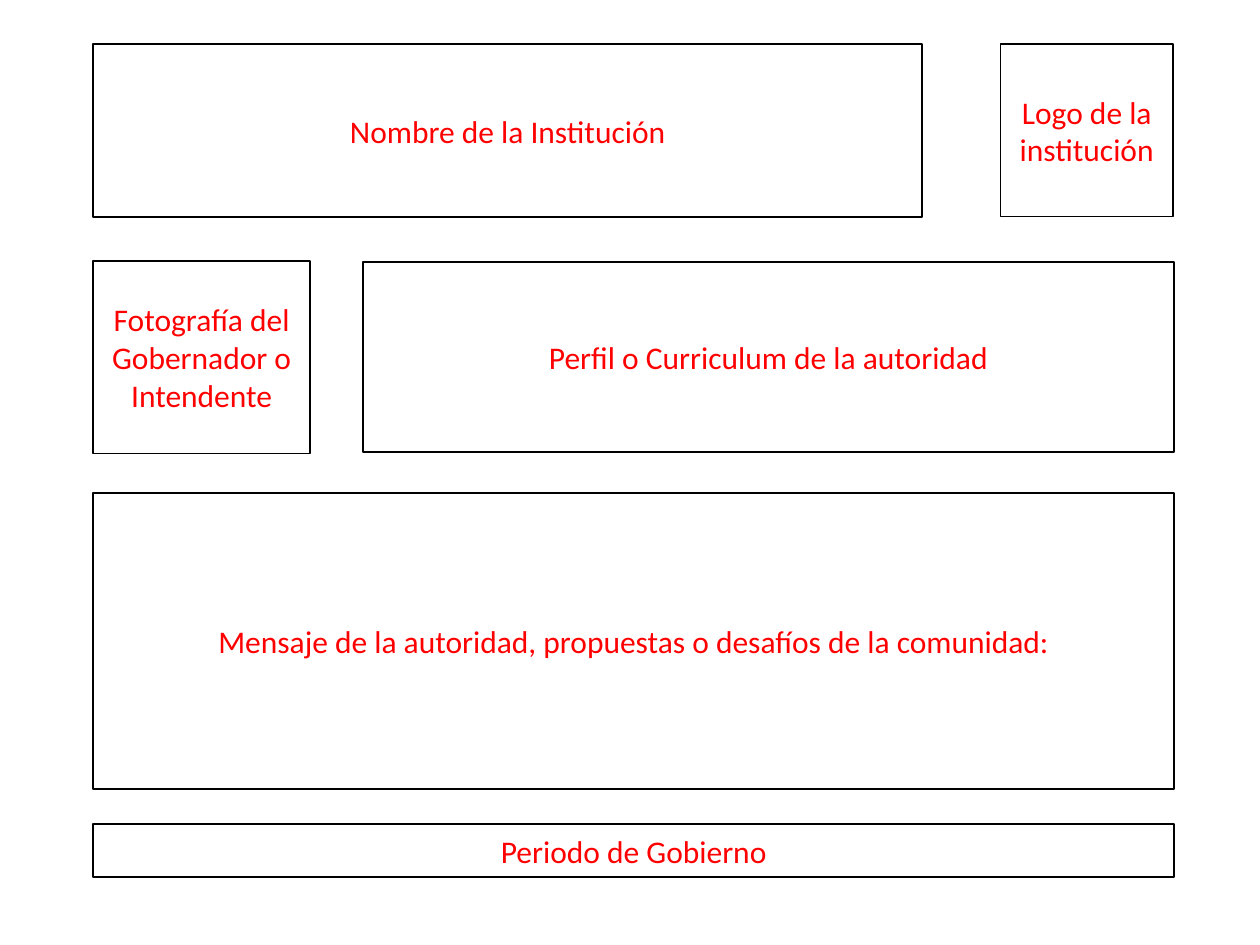
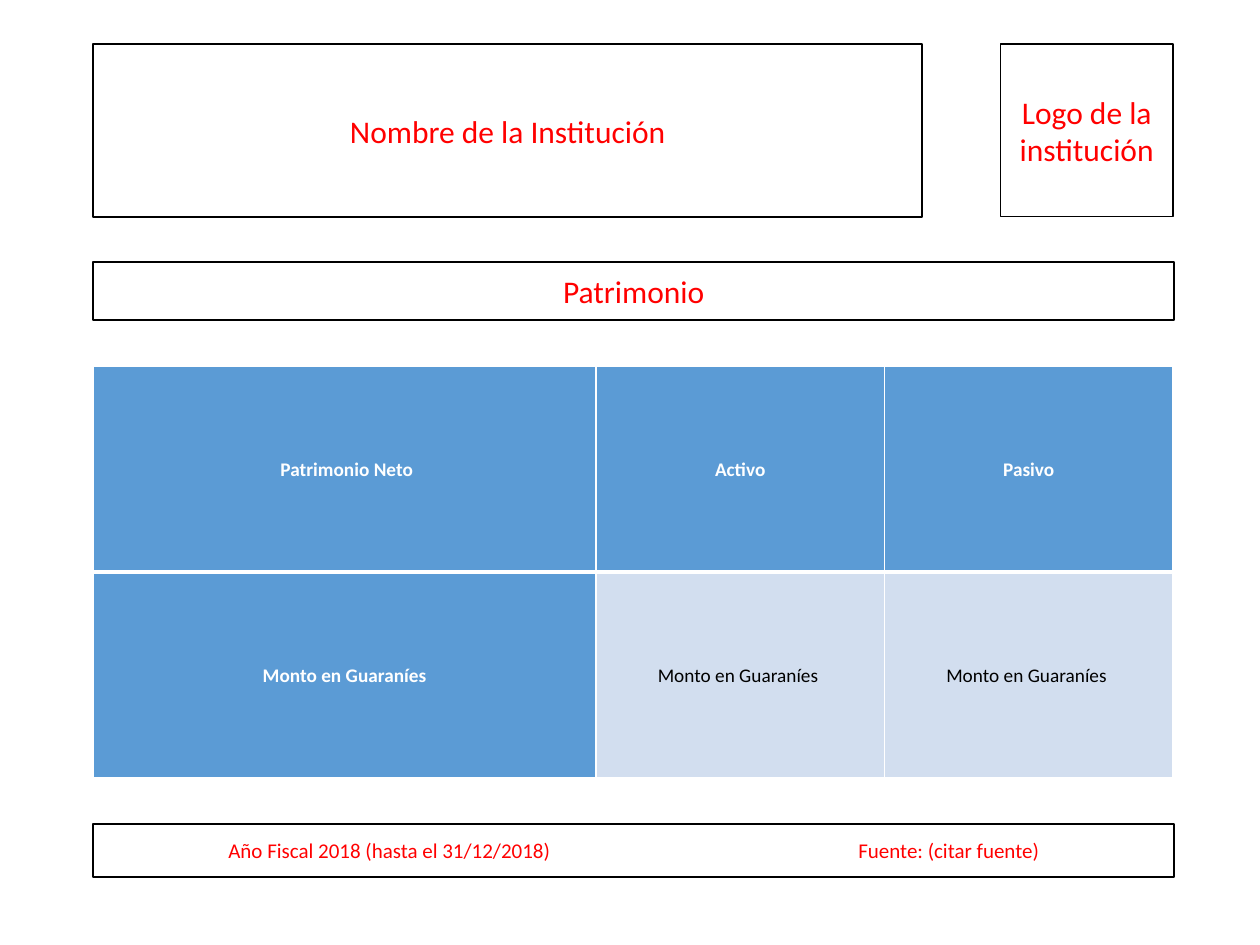
import dataclasses

import pptx
import pptx.dml.color
import pptx.enum.shapes
import pptx.enum.text
import pptx.oxml
import pptx.oxml.ns
import pptx.util
from pptx.presentation import Presentation as Deck
from pptx.shapes.autoshape import Shape
from pptx.slide import Slide
from pptx.table import _Cell as Cell
from pptx.text.text import _Paragraph as Para

Inches = pptx.util.Inches
Pt = pptx.util.Pt


@dataclasses.dataclass(frozen=True)
class Theme:
    font: str = "Calibri"
    red: str = "FF0000"
    black: str = "000000"
    white: str = "FFFFFF"
    blue: str = "5B9BD5"
    pale: str = "D2DEEF"
    big: int = 18
    note: int = 12
    small: int = 11
    thin: int = 1
    thick: int = 3


@dataclasses.dataclass(frozen=True)
class Box:
    text: str
    left: float
    top: float
    width: float
    height: float
    size: int = Theme.big


THEME = Theme()
LEFT, WIDE = 0.74, 8.58
FOOT_TOP, FOOT_HIGH = 6.54, 0.42
FOOT_TAB = 5.0

NAME = Box("Nombre de la Institución", LEFT, 0.35, 6.58, 1.37)
LOGO = Box("Logo de la institución", 7.94, 0.35, 1.37, 1.37)
PROFILE = (
    Box("Fotografía del Gobernador o Intendente", LEFT, 2.07, 1.72, 1.53),
    Box("Perfil o Curriculum de la autoridad", 2.88, 2.08, 6.44, 1.51),
    Box("Mensaje de la autoridad, propuestas o desafíos de la comunidad:",
        LEFT, 3.91, WIDE, 2.35),
    Box("Periodo de Gobierno", LEFT, FOOT_TOP, WIDE, FOOT_HIGH),
)
WEALTH = Box("Patrimonio", LEFT, 2.08, WIDE, 0.46)
SOURCE = Box("Año Fiscal 2018 (hasta el 31/12/2018) \tFuente: (citar fuente)",
             LEFT, FOOT_TOP, WIDE, FOOT_HIGH, THEME.note)

ROWS = (
    (" Patrimonio Neto", "Activo", "Pasivo"),
    ("Monto en Guaraníes", "Monto en Guaraníes ", "Monto en Guaraníes "),
)
COLS = (3.99, 2.29, 2.29)
GRID_TOP, ROW_HIGH = 2.91, 1.63


def rgb(code: str) -> pptx.dml.color.RGBColor:
    return pptx.dml.color.RGBColor.from_string(code)


def style(para: Para, size: int, color: str, bold: bool = False) -> None:
    para.alignment = pptx.enum.text.PP_ALIGN.CENTER
    for run in para.runs:
        run.font.name = THEME.font
        run.font.size = Pt(size)
        run.font.bold = bold
        run.font.color.rgb = rgb(color)


def dress(shape: Shape, box: Box) -> None:
    """Give a shape the outline, text and place of its box."""
    shape.left, shape.top = Inches(box.left), Inches(box.top)
    shape.width, shape.height = Inches(box.width), Inches(box.height)
    shape.fill.background()
    shape.line.color.rgb = rgb(THEME.black)
    shape.line.width = Pt(THEME.thin)
    frame = shape.text_frame
    frame.text = box.text
    frame.word_wrap = True
    frame.auto_size = pptx.enum.text.MSO_AUTO_SIZE.NONE
    frame.vertical_anchor = pptx.enum.text.MSO_ANCHOR.MIDDLE
    style(frame.paragraphs[0], box.size, THEME.red)


def draw(slide: Slide, box: Box) -> Shape:
    shape = slide.shapes.add_shape(
        pptx.enum.shapes.MSO_SHAPE.RECTANGLE, Inches(box.left),
        Inches(box.top), Inches(box.width), Inches(box.height))
    shape.shadow.inherit = False
    dress(shape, box)
    return shape


def start(deck: Deck) -> Slide:
    """Add a slide with the shared name and logo boxes."""
    slide = deck.slides.add_slide(deck.slide_layouts[5])
    dress(slide.shapes.title, NAME)
    draw(slide, LOGO)
    return slide


def set_tab(para: Para, stop: float) -> None:
    props = para._p.get_or_add_pPr()
    props.append(pptx.oxml.parse_xml(
        f'<a:tabLst {pptx.oxml.ns.nsdecls("a")}>'
        f'<a:tab pos="{Inches(stop)}" algn="l"/></a:tabLst>'))


def edge(cell: Cell, side: str, width: int) -> None:
    props = cell._tc.get_or_add_tcPr()
    props.append(pptx.oxml.parse_xml(
        f'<a:ln{side} {pptx.oxml.ns.nsdecls("a")} w="{Pt(width)}">'
        f'<a:solidFill><a:srgbClr val="{THEME.white}"/></a:solidFill>'
        f'</a:ln{side}>'))


def fill_cell(cell: Cell, text: str, row: int, col: int) -> None:
    head = row == 0 or col == 0
    cell.text = text
    cell.vertical_anchor = pptx.enum.text.MSO_ANCHOR.MIDDLE
    cell.margin_left = cell.margin_right = Inches(0.07)
    cell.margin_top = cell.margin_bottom = Inches(0)
    para = cell.text_frame.paragraphs[0]
    para.line_spacing = 1.07
    style(para, THEME.small, THEME.white if head else THEME.black, head)
    for side in "LRTB":
        inner = (row, side) in ((0, "B"), (1, "T"))
        edge(cell, side, THEME.thick if inner else THEME.thin)
    cell.fill.solid()
    cell.fill.fore_color.rgb = rgb(THEME.blue if head else THEME.pale)


def add_grid(slide: Slide) -> None:
    grid = slide.shapes.add_table(
        len(ROWS), len(COLS), Inches(LEFT), Inches(GRID_TOP),
        Inches(sum(COLS)), Inches(ROW_HIGH * len(ROWS))).table
    for col, width in enumerate(COLS):
        grid.columns[col].width = Inches(width)
    for row, texts in enumerate(ROWS):
        grid.rows[row].height = Inches(ROW_HIGH)
        for col, text in enumerate(texts):
            fill_cell(grid.cell(row, col), text, row, col)


def main() -> None:
    deck = pptx.Presentation()
    deck.slide_width, deck.slide_height = Inches(10), Inches(7.5)

    slide = start(deck)
    for box in PROFILE:
        draw(slide, box)

    slide = start(deck)
    draw(slide, WEALTH)
    foot = draw(slide, SOURCE)
    set_tab(foot.text_frame.paragraphs[0], FOOT_TAB)
    add_grid(slide)

    deck.save("out.pptx")


if __name__ == "__main__":
    main()
